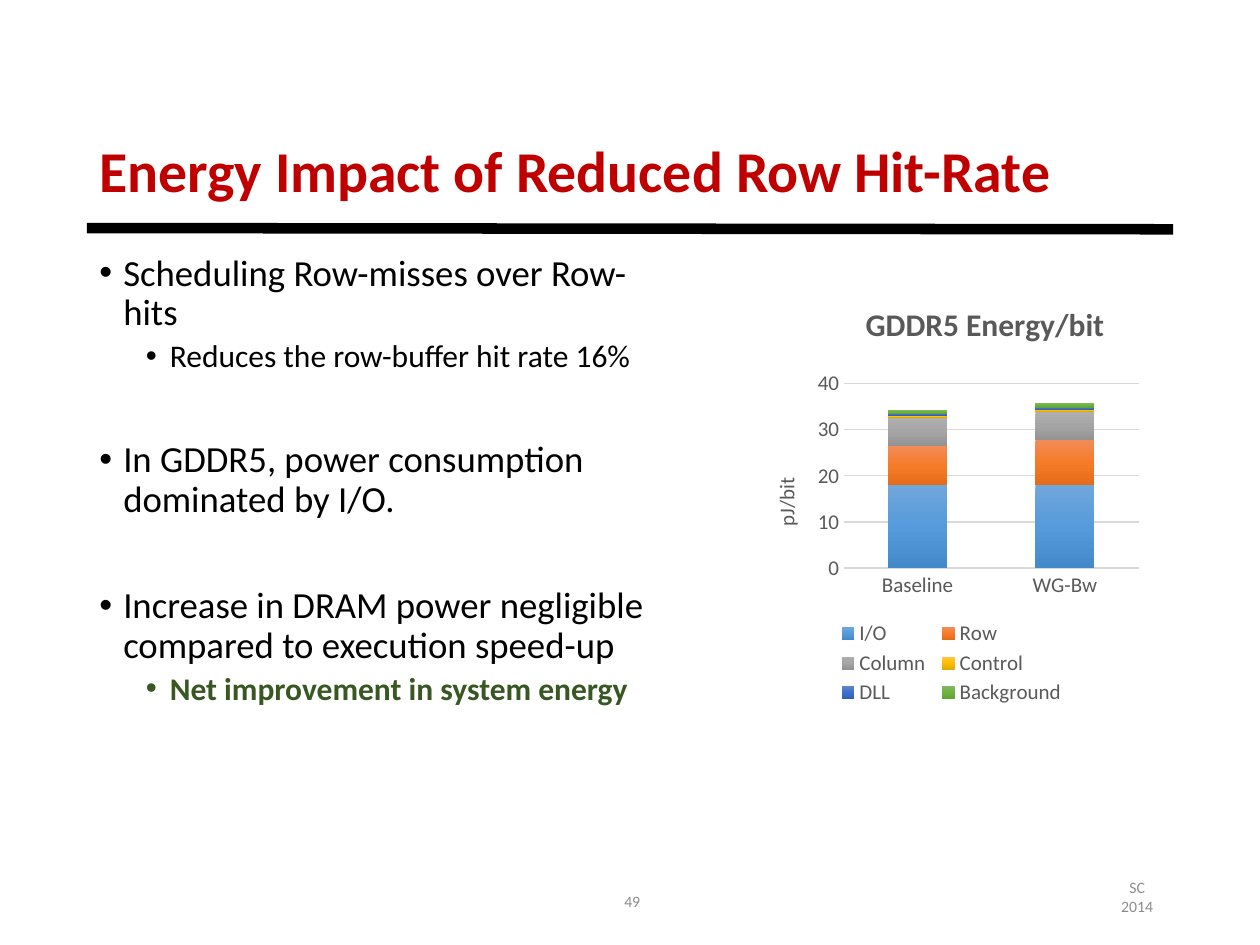
from lxml import etree
from pptx import Presentation
from pptx.chart.data import CategoryChartData
from pptx.dml.color import RGBColor
from pptx.enum.chart import XL_CHART_TYPE, XL_LEGEND_POSITION, XL_TICK_MARK
from pptx.enum.shapes import MSO_CONNECTOR
from pptx.enum.text import MSO_ANCHOR, PP_ALIGN
from pptx.oxml import parse_xml
from pptx.oxml.ns import nsdecls, qn
from pptx.util import Inches, Pt

STACKED = XL_CHART_TYPE.COLUMN_STACKED
BOTTOM = XL_LEGEND_POSITION.BOTTOM
NO_TICK = XL_TICK_MARK.NONE
STRAIGHT = MSO_CONNECTOR.STRAIGHT
TOP, MIDDLE = MSO_ANCHOR.TOP, MSO_ANCHOR.MIDDLE
LEFT, CENTER, RIGHT = PP_ALIGN.LEFT, PP_ALIGN.CENTER, PP_ALIGN.RIGHT

RED = RGBColor(0xC0, 0x00, 0x00)
BLACK = RGBColor(0x00, 0x00, 0x00)
GREEN = RGBColor(0x38, 0x57, 0x23)
FOOTER_GRAY = RGBColor(0x8C, 0x8C, 0x8C)
CHART_GRAY = RGBColor(0x59, 0x59, 0x59)
GRID_GRAY = RGBColor(0xD9, 0xD9, 0xD9)

# Series: name, values, gradient from top to bottom
ENERGY = [
    ("I/O", (18, 18), ("71A6DB", "559BDB", "448ACA")),
    ("Row", (8.4, 9.7), ("F18C57", "F67B28", "E56C19")),
    ("Column", (6.2, 6.2), ("AFAFAF", "A5A5A5", "939393")),
    ("Control", (0.4, 0.4), ("FFC64B", "FFC000", "E3AB00")),
    ("DLL", (0.4, 0.5), ("6183CB", "3E70CA", "3062BB")),
    ("Background", (0.8, 0.9), ("81B861", "6FB242", "62A336")),
]

# Bullets: level, text, colour, bold, space before
BULLETS = [
    (0, "Scheduling Row-misses over Row-hits", BLACK, False, 7.5),
    (1, "Reduces the row-buffer hit rate 16%", BLACK, False, 3.8),
    (0, "In GDDR5, power consumption dominated by I/O.", BLACK, False, 38),
    (0, "Increase in DRAM power negligible compared to execution speed-up",
     BLACK, False, 38),
    (1, "Net improvement in system energy", GREEN, True, 3.8),
]


class SlideBuilder:
    """Style and current slide; lengths are cells of a 100 by 75 grid."""

    FONT = "Calibri"
    CELL = 0.1

    def __init__(self, presentation):
        self.slide = presentation.slides.add_slide(presentation.slide_layouts[6])

    def cells(self, *lengths):
        return [Inches(length * self.CELL) for length in lengths]

    def style(self, font, size, color, bold=False):
        font.name, font.size, font.bold = self.FONT, Pt(size), bold
        font.color.rgb = color

    def text_frame(self, box, anchor):
        frame = self.slide.shapes.add_textbox(*self.cells(*box)).text_frame
        frame.word_wrap = True
        frame.vertical_anchor = anchor
        return frame

    def text(self, box, text, size, color, align=LEFT, bold=False, spacing=1.0):
        paragraph = self.text_frame(box, MIDDLE).paragraphs[0]
        paragraph.text = text
        paragraph.alignment = align
        paragraph.line_spacing = spacing
        self.style(paragraph.font, size, color, bold)

    def bullets(self, box, items):
        frame = self.text_frame(box, TOP)
        for index, (level, text, color, bold, before) in enumerate(items):
            paragraph = frame.add_paragraph() if index else frame.paragraphs[0]
            paragraph.text = text
            paragraph.level = level
            paragraph.line_spacing = 0.9
            paragraph.space_before = Pt(before)
            self.style(paragraph.font, (21, 18)[level], color, bold)
            properties = paragraph._p.get_or_add_pPr()
            properties.set("marL", str(Inches((0.19, 0.56)[level])))
            properties.set("indent", str(Inches(-0.19)))
            font = etree.SubElement(properties, qn("a:buFont"))
            font.set("typeface", "Arial")
            etree.SubElement(properties, qn("a:buChar")).set("char", "•")
            # The default run properties close the list of children
            for default in properties.findall(qn("a:defRPr")):
                properties.append(default)

    def line(self, start, end, color, width):
        connector = self.slide.shapes.add_connector(
            STRAIGHT, *self.cells(*start, *end))
        connector.line.color.rgb = color
        connector.line.width = Pt(width)
        etree.SubElement(connector._element.spPr, qn("a:effectLst"))

    def chart_title(self, owner, text, size, bold, position):
        paragraph = owner.text_frame.paragraphs[0]
        paragraph.text = text
        self.style(paragraph.font, size, CHART_GRAY, bold)
        self.place(owner._element, position)

    def place(self, element, position, inner=False):
        """Set a manual layout given as shares of the chart."""
        target = '<c:layoutTarget val="inner"/>' if inner else ""
        modes = "".join(f'<c:{axis}Mode val="edge"/>' for axis in "xy")
        values = "".join(f'<c:{key} val="{share}"/>'
                         for key, share in zip("xywh", position))
        layout = parse_xml(f'<c:layout {nsdecls("c")}><c:manualLayout>{target}'
                           f'{modes}{values}</c:manualLayout></c:layout>')
        for old in element.findall(qn("c:layout")):
            element.remove(old)
        leading = [child for child in element
                   if child.tag in (qn("c:tx"), qn("c:legendPos"))]
        element.insert(len(leading), layout)

    def gradient(self, series, colors):
        stops = "".join(
            f'<a:gs pos="{position}"><a:srgbClr val="{color}"/></a:gs>'
            for position, color in zip((0, 50000, 100000), colors))
        series._element.get_or_add_spPr().append(parse_xml(
            f'<a:gradFill {nsdecls("a")}><a:gsLst>{stops}</a:gsLst>'
            '<a:lin ang="5400000" scaled="0"/></a:gradFill>'))

    def stacked_chart(self, box, title, axis_title, categories, rows):
        data = CategoryChartData()
        data.categories = categories
        for name, values, _ in rows:
            data.add_series(name, values)
        chart = self.slide.shapes.add_chart(
            STACKED, *self.cells(*box), data).chart
        self.style(chart.font, 12, CHART_GRAY)
        self.chart_title(chart.chart_title, title, 18, True, (0.28, 0.02))

        # Columns
        plot = chart.plots[0]
        plot.gap_width, plot.overlap = 150, 100
        plot.vary_by_categories = False
        for series, (_, _, colors) in zip(plot.series, rows):
            self.gradient(series, colors)
        self.place(chart._chartSpace.chart.plotArea,
                   (0.24, 0.225, 0.74, 0.44), inner=True)

        # Axes
        for axis in (chart.category_axis, chart.value_axis):
            axis.major_tick_mark = axis.minor_tick_mark = NO_TICK
            self.style(axis.tick_labels.font, 12, CHART_GRAY)
        chart.category_axis.format.line.color.rgb = GRID_GRAY
        chart.category_axis.format.line.width = Pt(1)
        value_axis = chart.value_axis
        value_axis.minimum_scale, value_axis.maximum_scale = 0, 40
        value_axis.major_unit = 10
        value_axis.format.line.fill.background()
        grid_line = value_axis.major_gridlines.format.line
        grid_line.color.rgb, grid_line.width = GRID_GRAY, Pt(0.75)
        self.chart_title(value_axis.axis_title, axis_title, 12, False,
                         (0.05, 0.44))

        # Legend
        chart.has_legend = True
        chart.legend.position = BOTTOM
        chart.legend.include_in_layout = False
        self.style(chart.legend.font, 12, CHART_GRAY)
        self.place(chart.legend._element, (0.21, 0.78, 0.6, 0.22))


def main():
    presentation = Presentation()
    presentation.slide_width, presentation.slide_height = Inches(10), Inches(7.5)
    builder = SlideBuilder(presentation)

    # Heading and rule
    builder.text((6.9, 10.7, 86.2, 6.2), "Energy Impact of Reduced Row Hit-Rate",
                 33, RED, bold=True, spacing=0.9)
    builder.bullets((6.9, 19.7, 46.7, 41.5), BULLETS)
    builder.line((6.9, 18.1), (93.1, 18.2), BLACK, 6)

    # Footer
    builder.text((87.4, 69.2, 5.7, 4), "SC 2014", 9, FOOTER_GRAY, CENTER)
    builder.text((48.2, 69.5, 3.6, 4), "49", 9, FOOTER_GRAY, RIGHT)

    # Energy chart
    builder.stacked_chart((59.4, 22.9, 31.6, 33.4), "GDDR5 Energy/bit", "pJ/bit",
                          ("Baseline", "WG-Bw"), ENERGY)
    presentation.save("out.pptx")


if __name__ == "__main__":
    main()
